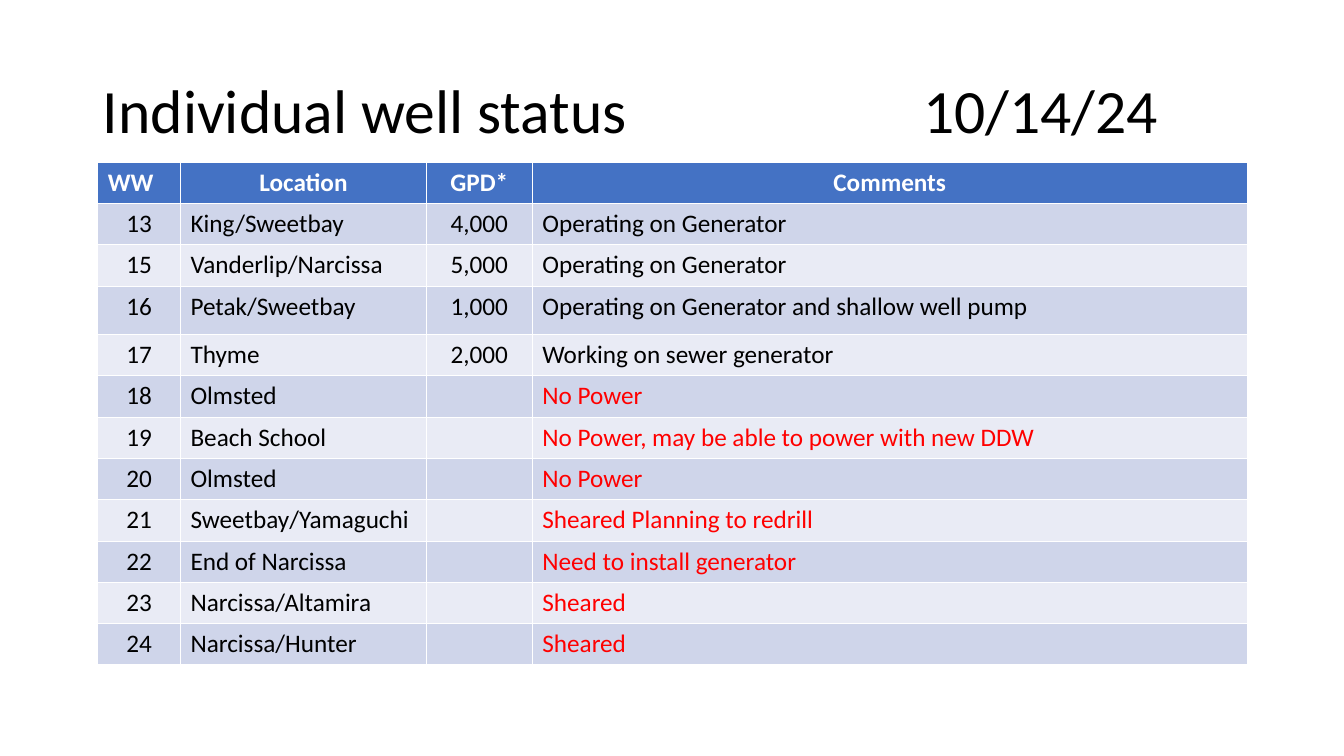
import pptx
import pptx.dml.color
import pptx.enum.text
import pptx.util

Inches = pptx.util.Inches
Align = pptx.enum.text.PP_ALIGN

HEADER_FILL = "4472C4"
BAND_FILLS = ["E9EBF5", "CFD5EA"]
WHITE, BLACK, RED = "FFFFFF", "000000", "FF0000"

HEADINGS = ["WW", "Location", "GPD*", "Comments"]
WELLS = [
    ["13", "King/Sweetbay", "4,000", "Operating on Generator"],
    ["15", "Vanderlip/Narcissa", "5,000", "Operating on Generator"],
    ["16", "Petak/Sweetbay", "1,000", "Operating on Generator and shallow well pump"],
    ["17", "Thyme", "2,000", "Working on sewer generator"],
    ["18", "Olmsted", "", "No Power"],
    ["19", "Beach School", "", "No Power, may be able to power with new DDW"],
    ["20", "Olmsted", "", "No Power"],
    ["21", "Sweetbay/Yamaguchi", "", "Sheared Planning to redrill"],
    ["22", "End of Narcissa", "", "Need to install generator"],
    ["23", "Narcissa/Altamira", "", "Sheared"],
    ["24", "Narcissa/Hunter", "", "Sheared"],
]
COLUMN_WIDTHS = [0.82, 2.44, 1.05, 7.09]
ROW_HEIGHT, TALL_ROW_HEIGHT = 0.41, 0.48
HEADER_ALIGNMENTS = [Align.LEFT, Align.CENTER, Align.CENTER, Align.CENTER]
BODY_ALIGNMENTS = [Align.CENTER, Align.LEFT, Align.CENTER, Align.LEFT]


def rgb(color):
    return pptx.dml.color.RGBColor.from_string(color)


def format_font(font, size, color, bold=False):
    font.name = "Calibri"
    font.size = pptx.util.Pt(size)
    font.color.rgb = rgb(color)
    font.bold = bold


deck = pptx.Presentation()
deck.slide_width = Inches(13.33)
deck.slide_height = Inches(7.5)
slide = deck.slides.add_slide(deck.slide_layouts[5])

# Title with the date set off by one-inch tab stops
title = slide.shapes.title
title.left, title.top = Inches(0.92), Inches(0.4)
title.width, title.height = Inches(11.5), Inches(1.45)
frame = title.text_frame
frame.text = "Individual well status\t\t\t 10/14/24"
frame.word_wrap = True
frame.auto_size = pptx.enum.text.MSO_AUTO_SIZE.NONE
frame.vertical_anchor = pptx.enum.text.MSO_ANCHOR.MIDDLE
para = frame.paragraphs[0]
para.alignment = Align.LEFT
para.line_spacing = 0.9
para._p.get_or_add_pPr().set("defTabSz", str(Inches(1)))
format_font(para.runs[0].font, 44, BLACK)

# Well table; its default style supplies the white cell borders
rows = [HEADINGS] + WELLS
table = slide.shapes.add_table(
    len(rows), len(HEADINGS), Inches(0.97), Inches(1.61),
    Inches(sum(COLUMN_WIDTHS)), Inches(ROW_HEIGHT * len(rows)),
).table
for column, width in zip(table.columns, COLUMN_WIDTHS):
    column.width = Inches(width)

for row_index, values in enumerate(rows):
    is_header = row_index == 0
    is_tall = values[0] == "16"
    table.rows[row_index].height = Inches(TALL_ROW_HEIGHT if is_tall else ROW_HEIGHT)
    alignments = HEADER_ALIGNMENTS if is_header else BODY_ALIGNMENTS
    fill = HEADER_FILL if is_header else BAND_FILLS[row_index % 2]

    for column_index, value in enumerate(values):
        cell = table.cell(row_index, column_index)
        cell.fill.solid()
        cell.fill.fore_color.rgb = rgb(fill)
        para = cell.text_frame.paragraphs[0]
        para.text = value
        para.alignment = alignments[column_index]
        # Wells that give no water have their comment in red
        is_idle = column_index == 3 and not values[2]
        color = WHITE if is_header else RED if is_idle else BLACK
        for span in para.runs:
            format_font(span.font, 18, color, bold=is_header)

deck.save("out.pptx")
